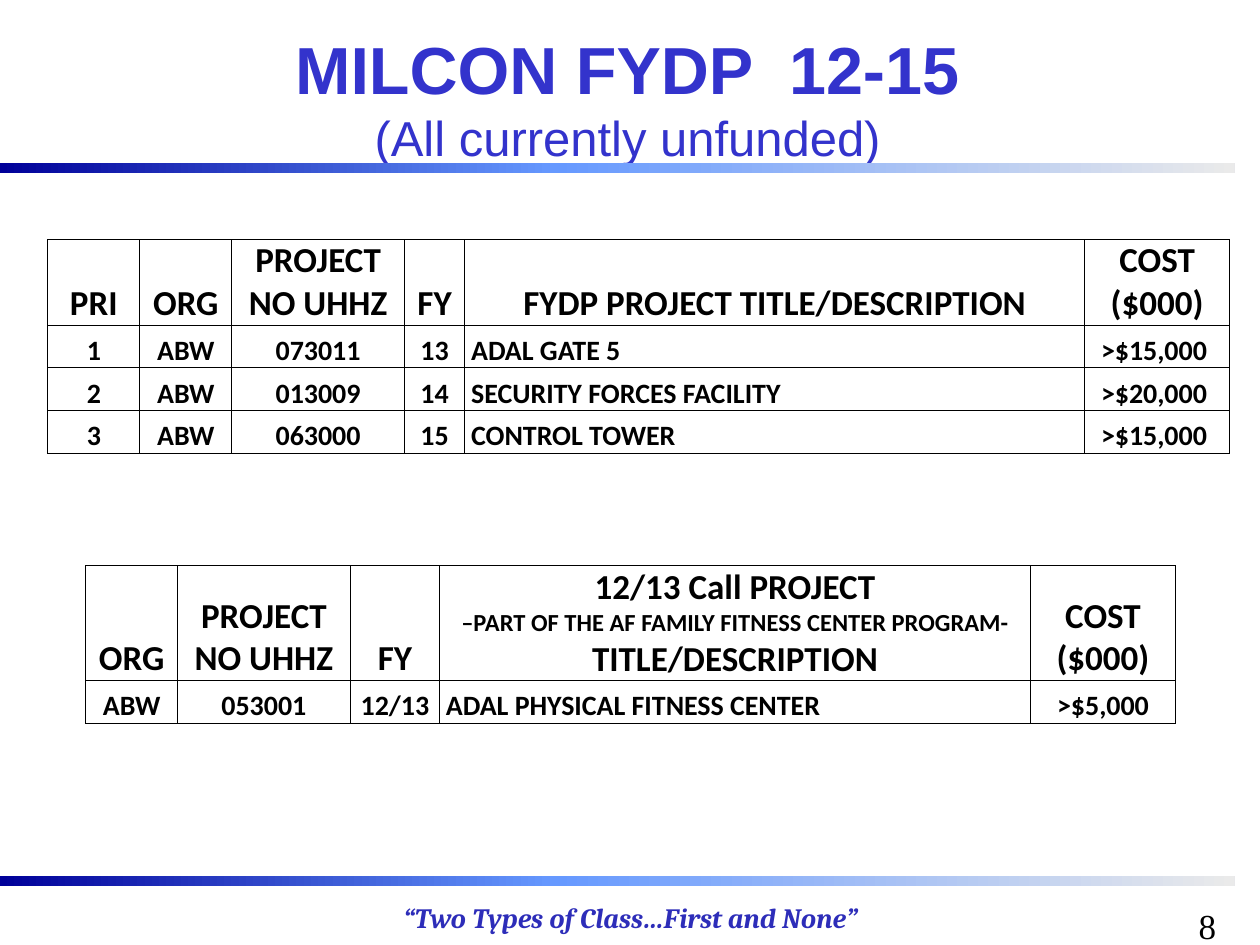
from copy import deepcopy

from lxml.etree import SubElement
from pptx import Presentation
from pptx.dml.color import RGBColor
from pptx.enum.text import MSO_ANCHOR, MSO_AUTO_SIZE, PP_ALIGN
from pptx.enum.shapes import MSO_SHAPE
from pptx.oxml.ns import qn
from pptx.util import Inches, Pt

BLACK = RGBColor(0x00, 0x00, 0x00)
TITLE_BLUE = RGBColor(0x33, 0x33, 0xCC)
MOTTO_BLUE = RGBColor(0x2D, 0x2D, 0xB9)
NAVY = RGBColor(0x00, 0x00, 0x99)
SKY = RGBColor(0x66, 0x99, 0xFF)
PALE = RGBColor(0xEA, 0xEA, 0xEA)

HEADER_SIZE, BODY_SIZE = 20, 16


def add_span(para, text, size=16, font="Calibri", color=BLACK, bold=False, italic=False):
    span = para.add_run()
    span.text = text
    span.font.size = Pt(size)
    span.font.name = font
    span.font.color.rgb = color
    span.font.bold = bold
    span.font.italic = italic
    return span


def add_text(page, left, top, width, height, text, align, **style):
    box = page.shapes.add_textbox(*map(Inches, (left, top, width, height)))
    box.text_frame.word_wrap = True
    para = box.text_frame.paragraphs[0]
    para.alignment = align
    add_span(para, text, **style)


def add_title(page, heading, subheading):
    title = page.shapes.title
    title.left, title.top, title.width, title.height = map(Inches, (1.29, 0.29, 7.38, 0.96))
    frame = title.text_frame
    frame.auto_size = MSO_AUTO_SIZE.NONE
    frame.vertical_anchor = MSO_ANCHOR.MIDDLE
    para = frame.paragraphs[0]
    para.alignment = PP_ALIGN.CENTER
    style = {"font": "Arial", "color": TITLE_BLUE}
    span = add_span(para, heading, size=38, bold=True, **style)
    # The line break takes the heading's format so it keeps that line's height
    para.add_line_break()
    para._p.find(qn("a:br")).append(deepcopy(span._r.rPr))
    add_span(para, subheading, size=28, **style)


def add_gradient_bar(page, left, top, width, start, end):
    bar = page.shapes.add_shape(MSO_SHAPE.RECTANGLE, *map(Inches, (left, top, width, 0.08)))
    bar.shadow.inherit = False
    bar.line.fill.background()
    bar.fill.gradient()
    bar.fill.gradient_angle = 0
    for stop, color in zip(bar.fill.gradient_stops, (start, end)):
        stop.color.rgb = color


def add_divider(page, top):
    add_gradient_bar(page, 0, top, 4.42, NAVY, SKY)
    add_gradient_bar(page, 4.42, top, 5.38, SKY, PALE)


def set_borders(cell):
    properties = cell._tc.get_or_add_tcPr()
    for side in ("a:lnL", "a:lnR", "a:lnT", "a:lnB"):
        line = SubElement(properties, qn(side), w=str(Pt(0.5)))
        fill = SubElement(line, qn("a:solidFill"))
        SubElement(fill, qn("a:srgbClr"), val=str(BLACK))


def fill_cell(cell, lines, align, indent=0, right=0):
    """Write (text, size) lines, one paragraph each."""
    set_borders(cell)
    cell.fill.background()
    cell.vertical_anchor = MSO_ANCHOR.BOTTOM
    cell.margin_top = cell.margin_bottom = 0
    cell.margin_left, cell.margin_right = Inches(indent), Inches(right)
    frame = cell.text_frame
    for index, (text, size) in enumerate(lines):
        para = frame.add_paragraph() if index else frame.paragraphs[0]
        para.alignment = align
        add_span(para, text, size=size, bold=True)


def add_project_table(page, left, top, widths, heights, headers, records, cost_right=0):
    """Add a table whose last two columns are description and cost."""
    size = (sum(widths), sum(heights))
    shape = page.shapes.add_table(len(heights), len(widths), *map(Inches, (left, top, *size)))
    table = shape.table
    table.first_row = table.horz_banding = False
    for column, width in zip(table.columns, widths):
        column.width = Inches(width)
    for row, height in zip(table.rows, heights):
        row.height = Inches(height)

    for index, lines in enumerate(headers):
        fill_cell(table.cell(0, index), lines, PP_ALIGN.CENTER)
    description, cost = len(widths) - 2, len(widths) - 1
    for number, record in enumerate(records, start=1):
        for index, text in enumerate(record):
            align = PP_ALIGN.LEFT if index == description else PP_ALIGN.CENTER
            fill_cell(table.cell(number, index), [(text, BODY_SIZE)], align,
                      indent=0.05 if index == description else 0,
                      right=cost_right if index == cost else 0)


def header(*lines):
    return [(text, HEADER_SIZE) for text in lines]


def main():
    deck = Presentation()
    deck.slide_width, deck.slide_height = Inches(10), Inches(7.5)
    page = deck.slides.add_slide(deck.slide_layouts[5])

    # Frame: dividers, motto and page number
    for top in (1.29, 6.95):
        add_divider(page, top)
    add_text(page, 1.42, 7.1, 7.17, 0.37, "“Two Types of Class…First and None”",
             PP_ALIGN.CENTER, font="Cambria", color=MOTTO_BLUE, bold=True, italic=True)
    add_text(page, 7.67, 7.13, 2.08, 0.37, "8", PP_ALIGN.RIGHT,
             size=20, font="Times New Roman")

    add_title(page, "MILCON FYDP  12-15", "(All currently unfunded)")

    org, project, year = header("ORG"), header("PROJECT NO UHHZ"), header("FY")
    cost = header("COST", "($000)")

    # Prioritised projects
    add_project_table(
        page, 0.38, 1.9,
        widths=[0.73, 0.73, 1.37, 0.48, 4.92, 1.15],
        heights=[0.68] + [0.34] * 3,
        headers=[header("PRI"), org, project, year,
                 header("FYDP PROJECT TITLE/DESCRIPTION"), cost],
        records=[
            ("1", "ABW", "073011", "13", "ADAL GATE 5", ">$15,000"),
            ("2", "ABW", "013009", "14", "SECURITY FORCES FACILITY", ">$20,000"),
            ("3", "ABW", "063000", "15", "CONTROL TOWER", ">$15,000"),
        ],
        cost_right=0.05)

    # Fitness center call project
    call_title = [("12/13 Call PROJECT", HEADER_SIZE),
                  ("–PART OF THE AF FAMILY FITNESS CENTER PROGRAM-", 14),
                  ("TITLE/DESCRIPTION", HEADER_SIZE)]
    add_project_table(
        page, 0.68, 4.49,
        widths=[0.73, 1.37, 0.71, 4.69, 1.15],
        heights=[0.91, 0.34],
        headers=[org, project, year, call_title, cost],
        records=[("ABW", "053001", "12/13", "ADAL PHYSICAL FITNESS CENTER", ">$5,000")])

    deck.save("out.pptx")


if __name__ == "__main__":
    main()
